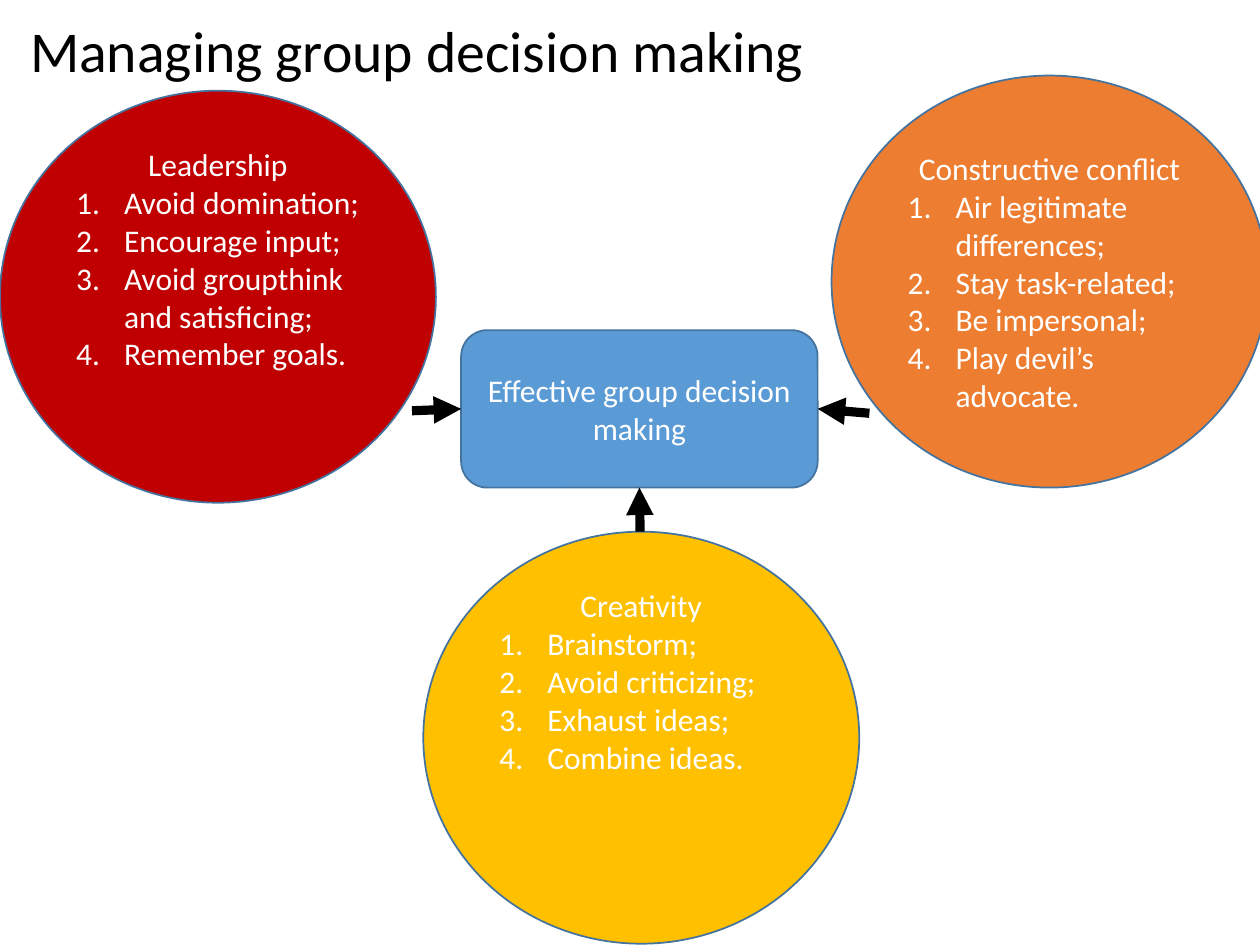
from dataclasses import dataclass

from lxml.etree import SubElement
from pptx import Presentation
from pptx.dml.color import RGBColor as Rgb
from pptx.enum.shapes import MSO_CONNECTOR as Conn, MSO_SHAPE as Kind
from pptx.enum.text import MSO_ANCHOR as Anchor, PP_ALIGN as Align
from pptx.oxml.ns import qn
from pptx.util import Inches, Pt

COLORS = {"red": "C00000", "orange": "ED7D31", "gold": "FFC000",
          "blue": "5B9BD5", "edge": "43739E", "black": "000000",
          "white": "FFFFFF"}
WIDE, HIGH = 3.46, 3.27  # size of every circle
INDENT = Inches(0.38)


@dataclass
class Circle:
    left: float
    top: float
    color: str
    head: str
    items: list[str]
    foot: float  # bottom inset, lifts the text


@dataclass
class Arrow:
    start: tuple[float, float]
    end: tuple[float, float]
    side: int  # side of the box it meets


CIRCLES = [
    Circle(6.6, 0.6, "orange", "Constructive conflict",
           ["Air legitimate differences;", "Stay task-related;",
            "Be impersonal;", "Play devil’s advocate."], 0.05),
    Circle(3.36, 4.22, "gold", "Creativity",
           ["Brainstorm;", "Avoid criticizing;",
            "Exhaust ideas;", "Combine ideas."], 0.95),
    Circle(0, 0.72, "red", "Leadership",
           ["Avoid domination;", "Encourage input;",
            "Avoid groupthink and satisficing;", "Remember goals."], 0.65),
]
ARROWS = [
    Arrow((5.08, 4.22), (5.08, 3.87), 2),
    Arrow((3.27, 3.26), (3.66, 3.26), 1),
    Arrow((6.9, 3.28), (6.48, 3.26), 3),
]


def rgb(name: str) -> Rgb:
    return Rgb.from_string(COLORS[name])


def style(para, size: float, color: str) -> None:
    form = {"name": "Calibri", "size": Pt(size)}
    for key, value in form.items():
        setattr(para.font, key, value)
    para.font.color.rgb = rgb(color)


def add_shape(slide, kind, box: tuple, color: str, text: str):
    shape = slide.shapes.add_shape(kind, *map(Inches, box))
    shape.shadow.inherit = False
    shape.fill.solid()
    shape.fill.fore_color.rgb = rgb(color)
    shape.line.color.rgb = rgb("edge")
    shape.line.width = Pt(1)
    frame = shape.text_frame
    frame.word_wrap = True
    frame.vertical_anchor = Anchor.MIDDLE
    para = frame.paragraphs[0]
    para.text = text
    para.alignment = Align.CENTER
    style(para, 18, "white")
    return shape


def add_circle(slide, part: Circle) -> None:
    shape = add_shape(slide, Kind.OVAL, (part.left, part.top, WIDE, HIGH),
                      part.color, part.head)
    frame = shape.text_frame
    frame.margin_bottom = Inches(part.foot)
    for item in part.items:
        para = frame.add_paragraph()
        para.text = item
        para.alignment = Align.LEFT
        props = para._p.get_or_add_pPr()
        props.set("marL", str(INDENT))
        props.set("indent", str(-INDENT))
        SubElement(props, qn("a:buFont"), typeface="+mj-lt")
        SubElement(props, qn("a:buAutoNum"), type="arabicPeriod")
        style(para, 18, "white")


def add_arrow(slide, part: Arrow, box) -> None:
    line = slide.shapes.add_connector(
        Conn.STRAIGHT, *map(Inches, part.start + part.end))
    line.end_connect(box, part.side)
    line.line.color.rgb = rgb("black")
    line.line.width = Pt(5.25)
    SubElement(line.line._get_or_add_ln(), qn("a:tailEnd"), type="triangle")
    SubElement(line._element.spPr, qn("a:effectLst"))


def add_title(slide, text: str) -> None:
    box = slide.shapes.add_textbox(*map(Inches, (0.14, 0.13, 8.62, 0.59)))
    frame = box.text_frame
    frame.word_wrap = True
    frame.vertical_anchor = Anchor.MIDDLE
    para = frame.paragraphs[0]
    para.text = text
    para.line_spacing = 0.9
    style(para, 33, "black")


def main() -> None:
    deck = Presentation()
    deck.slide_width, deck.slide_height = Inches(10), Inches(7.5)
    slide = deck.slides.add_slide(deck.slide_layouts[6])

    # Title and central box
    add_title(slide, "Managing group decision making")
    box = add_shape(slide, Kind.ROUNDED_RECTANGLE, (3.66, 2.62, 2.83, 1.25),
                    "blue", "Effective group decision making")

    # Circles and the arrows to the box
    for part in CIRCLES:
        add_circle(slide, part)
    for part in ARROWS:
        add_arrow(slide, part, box)

    deck.save("out.pptx")


if __name__ == "__main__":
    main()
